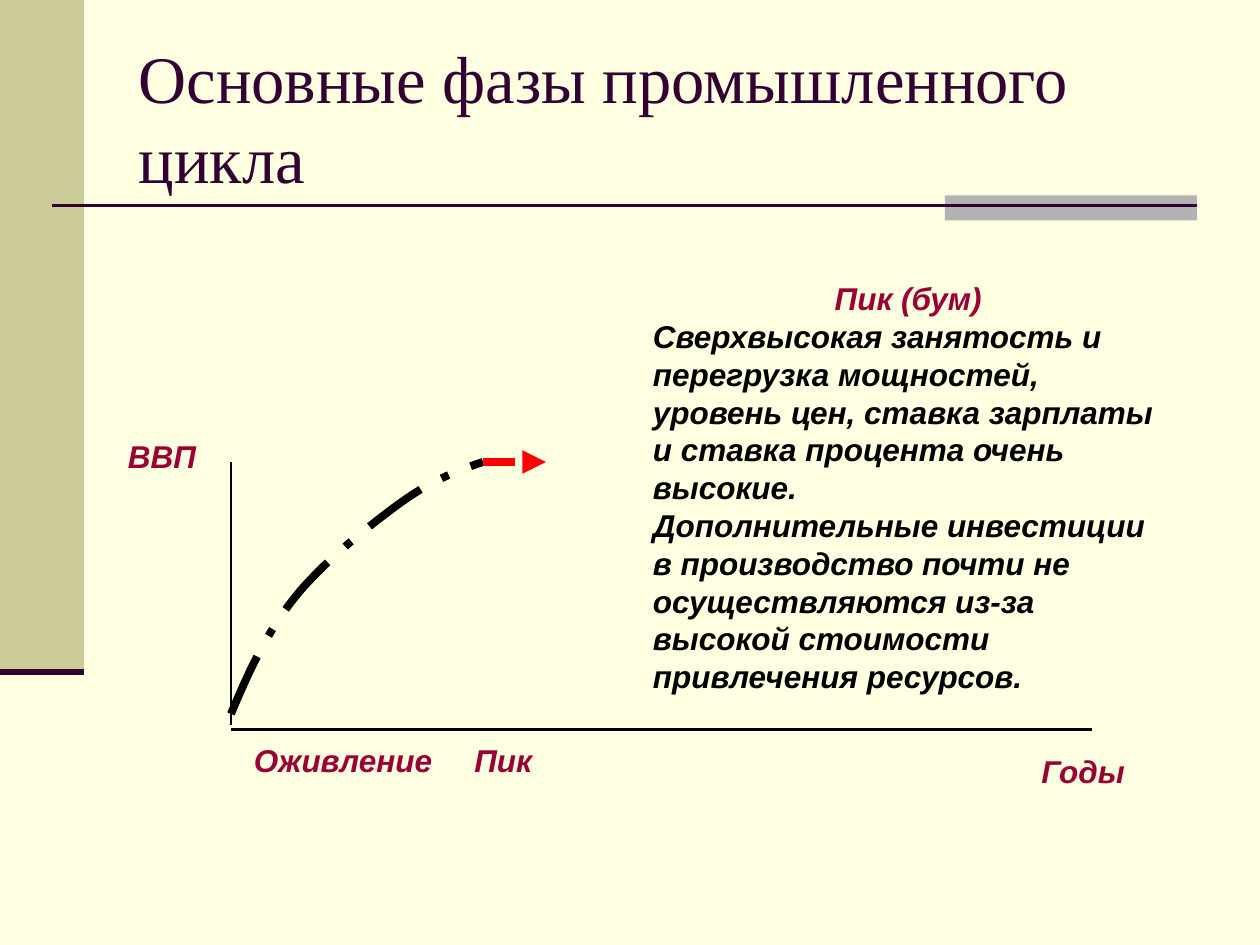
import pptx
import pptx.dml.color
import pptx.enum.dml
import pptx.enum.shapes
import pptx.enum.text
import pptx.oxml.xmlchemy
import pptx.util

PX = 7620  # 120 px to the inch
PLUM, WINE, BLACK, RED = "330033", "990033", "000000", "FF0000"
DASH = pptx.enum.dml.MSO_LINE


def px(length):
    return pptx.util.Emu(round(length * PX))


def color(hex_code):
    return pptx.dml.color.RGBColor.from_string(hex_code)


def style_line(line, hex_code, width, dash=None):
    line.color.rgb = color(hex_code)
    line.width = pptx.util.Pt(width)
    if dash is not None:
        line.dash_style = dash


def add_rect(slide, x, y, w, h, fill):
    rect = slide.shapes.add_shape(
        pptx.enum.shapes.MSO_SHAPE.RECTANGLE, px(x), px(y), px(w), px(h))
    rect.shadow.inherit = False
    rect.fill.solid()
    rect.fill.fore_color.rgb = color(fill)
    rect.line.fill.background()


def add_line(slide, start, end, hex_code, width, dash=None):
    line = slide.shapes.add_connector(
        pptx.enum.shapes.MSO_CONNECTOR.STRAIGHT, *map(px, start + end))
    style_line(line.line, hex_code, width, dash)
    line._element.spPr.append(pptx.oxml.xmlchemy.OxmlElement("a:effectLst"))
    return line


def add_run(paragraph, text, font, size, hex_code, emphasis=False):
    run = paragraph.add_run()
    run.text = text
    run.font.name = font
    run.font.size = pptx.util.Pt(size)
    run.font.color.rgb = color(hex_code)
    run.font.bold = run.font.italic = emphasis


def add_text(slide, x, y, w, h, paragraphs):
    """Place (text, colour, alignment) paragraphs in one box."""
    frame = slide.shapes.add_textbox(px(x), px(y), px(w), px(h)).text_frame
    frame.word_wrap = True
    for i, (text, hex_code, align) in enumerate(paragraphs):
        paragraph = frame.add_paragraph() if i else frame.paragraphs[0]
        paragraph.alignment = align
        add_run(paragraph, text, "Arial", 18, hex_code, True)


def bezier(p0, p1, p2, p3, steps=16):
    for i in range(1, steps + 1):
        t = i / steps
        weights = ((1 - t) ** 3, 3 * t * (1 - t) ** 2, 3 * t * t * (1 - t), t ** 3)
        yield tuple(sum(k * p[axis] for k, p in zip(weights, (p0, p1, p2, p3)))
                    for axis in (0, 1))


def add_decor(slide, x, y, w, h):
    # Side band and its foot
    add_rect(slide, x, y, 80, 640, "CCCC99")
    # Rule under the title with its grey block
    add_rect(slide, x + w - 300, y + 186, 240, 24, "B2B2B2")
    add_line(slide, (x + 50, y + 196), (x + w - 60, y + 196), PLUM, 1.5)
    add_line(slide, (x, y + 640), (x + 80, y + 640), PLUM, 3.5)


def add_title(slide, x, y, w, h):
    title = slide.shapes.title
    title.left, title.top, title.width, title.height = map(px, (x, y, w, h))
    frame = title.text_frame
    frame.word_wrap = True
    frame.auto_size = pptx.enum.text.MSO_AUTO_SIZE.NONE
    frame.vertical_anchor = pptx.enum.text.MSO_ANCHOR.MIDDLE
    heading = frame.paragraphs[0]
    heading.alignment = pptx.enum.text.PP_ALIGN.LEFT
    add_run(heading, "Основные фазы промышленного цикла",
            "Times New Roman", 38, PLUM)


def add_description(slide, x, y, w, h):
    left = pptx.enum.text.PP_ALIGN.LEFT
    add_text(slide, x, y, w, h, [
        ("Пик (бум)", WINE, pptx.enum.text.PP_ALIGN.CENTER),
        ("Сверхвысокая занятость и перегрузка мощностей,", BLACK, left),
        ("уровень цен, ставка зарплаты и ставка процента очень высокие.", BLACK, left),
        ("Дополнительные инвестиции в производство почти не осуществляются "
         "из-за высокой стоимости привлечения ресурсов.", BLACK, left),
    ])


def add_cycle_graph(slide, x, y, w, h):
    # Axes
    add_line(slide, (x, y), (x, y + h - 5), BLACK, 1.5)
    add_line(slide, (x, y + h), (x + w, y + h), BLACK, 1.5)

    # Recovery curve
    peak = (x + 240, y)
    knots = [(px(x + dx), px(y + dy)) for dx, dy in (
        (0, 240), (16, 202), (33, 164), (60, 130), (87, 96), (130, 62),
        (160, 40), (190, 18), (214, 9), (240, 0))]
    points = [point for i in range(0, 9, 3) for point in bezier(*knots[i:i + 4])]
    builder = slide.shapes.build_freeform(*knots[0])
    builder.add_line_segments(points, close=False)
    curve = builder.convert_to_shape()
    curve.shadow.inherit = False
    curve.fill.background()
    style_line(curve.line, BLACK, 4.5, DASH.LONG_DASH_DOT)

    # Peak arrow
    arrow = add_line(slide, peak, (peak[0] + 60, y), RED, 4.5, DASH.DASH_DOT)
    head = pptx.oxml.xmlchemy.OxmlElement("a:tailEnd")
    head.set("type", "triangle")
    arrow.line._get_or_add_ln().append(head)

    # Axis and phase labels
    for text, dx, dy, width in (
            ("ВВП", -110, -30, 100), ("Оживление", 10, h + 5, 200),
            ("Пик", 220, h + 5, 110), ("Годы", w - 60, h + 15, 170)):
        add_text(slide, x + dx, y + dy, width, 48,
                 [(text, WINE, pptx.enum.text.PP_ALIGN.LEFT)])


def main():
    deck = pptx.Presentation()
    deck.slide_width, deck.slide_height = px(1200), px(900)
    slide = deck.slides.add_slide(deck.slide_layouts[5])
    slide.background.fill.solid()
    slide.background.fill.fore_color.rgb = color("FFFFE1")

    add_decor(slide, 0, 0, 1200, 900)
    add_title(slide, 120, 36, 1020, 150)
    add_description(slide, 610, 260, 510, 408)
    add_cycle_graph(slide, 220, 440, 820, 255)
    deck.save("out.pptx")


if __name__ == "__main__":
    main()
